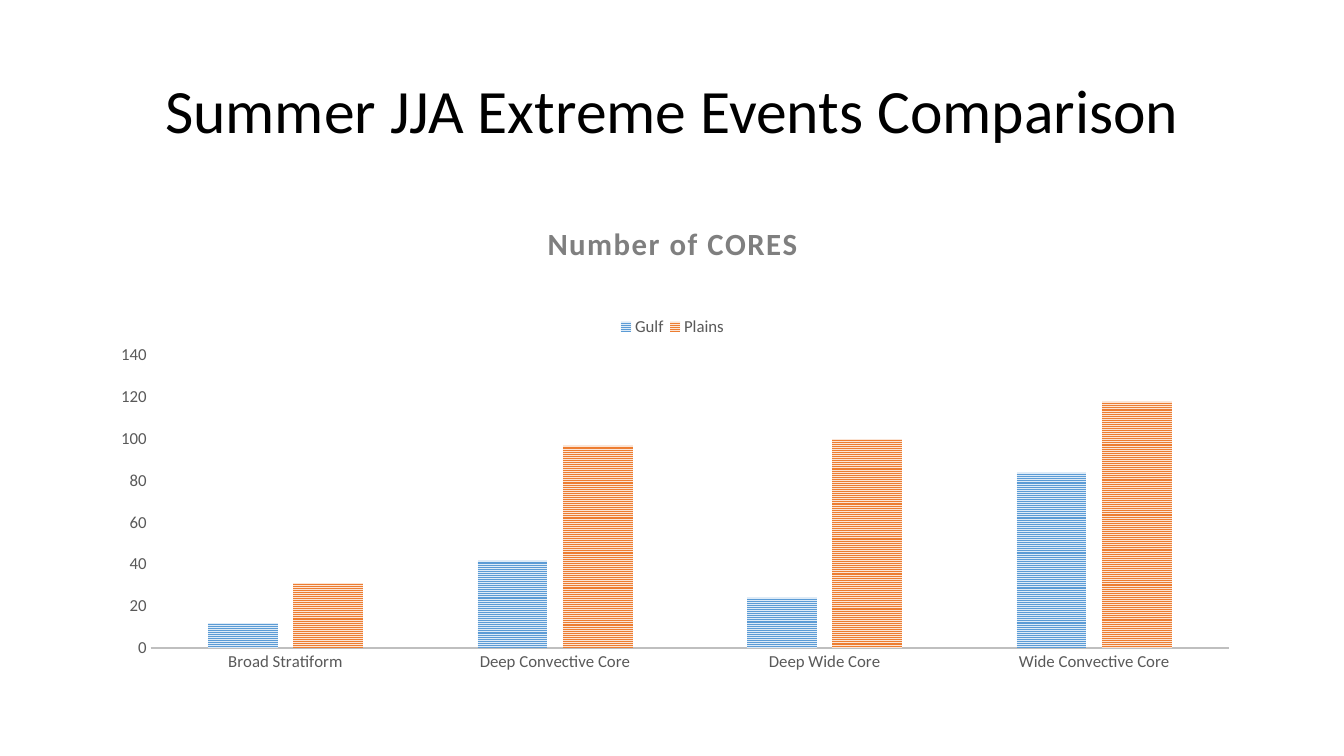
import pptx
import pptx.chart.data
import pptx.dml.color
import pptx.enum.chart
import pptx.enum.dml
import pptx.enum.text
import pptx.oxml
import pptx.oxml.ns
import pptx.util

COL, ROW = 0.92, 0.4
CATEGORIES = ["Broad Stratiform", "Deep Convective Core", "Deep Wide Core", "Wide Convective Core"]
SERIES = [
    ("Gulf", [12, 42, 24, 84], "5B9BD5", "DEEBF7"),
    ("Plains", [31, 97, 100, 118], "ED7D31", "FBE5D6"),
]


def rgb(value):
    return pptx.dml.color.RGBColor.from_string(value)


def assign(obj, values):
    for name, value in values.items():
        setattr(obj, name, value)


class Deck:
    font = "Calibri"
    ink, label, heading, axis_line = "000000", "595959", "7F7F7F", "BFBFBF"

    def __init__(self, prs):
        self.s = prs.slides.add_slide(prs.slide_layouts[5])

    def box(self, col, row, cols, rows):
        names = ("left", "top", "width", "height")
        lengths = (col * COL, row * ROW, cols * COL, rows * ROW)
        return {n: pptx.util.Inches(v) for n, v in zip(names, lengths)}

    def style(self, font, size, color, bold=False):
        assign(font, {"name": self.font, "size": pptx.util.Pt(size), "bold": bold})
        font.color.rgb = rgb(color)

    def title(self, text, *place):
        sp = self.s.shapes.title
        assign(sp, self.box(*place))
        tf = sp.text_frame
        assign(tf, {
            "text": text,
            "word_wrap": True,
            "auto_size": pptx.enum.text.MSO_AUTO_SIZE.NONE,
            "vertical_anchor": pptx.enum.text.MSO_ANCHOR.MIDDLE,
        })
        p = tf.paragraphs[0]
        assign(p, {"alignment": pptx.enum.text.PP_ALIGN.CENTER, "line_spacing": 0.9})
        self.style(p.runs[0].font, 44, self.ink)

    def layout(self, x, y, w, h, target=""):
        shares = "".join(f'<c:{n} val="{v}"/>' for n, v in zip("xywh", (x, y, w, h)))
        return pptx.oxml.parse_xml(
            f'<c:layout {pptx.oxml.ns.nsdecls("c")}><c:manualLayout>{target}'
            f'<c:xMode val="edge"/><c:yMode val="edge"/>{shares}'
            "</c:manualLayout></c:layout>"
        )

    def chart(self, heading, *place):
        data = pptx.chart.data.CategoryChartData()
        data.categories = CATEGORIES
        for name, values, *_ in SERIES:
            data.add_series(name, values)
        kind = pptx.enum.chart.XL_CHART_TYPE.COLUMN_CLUSTERED
        chart = self.s.shapes.add_chart(
            kind, *self.box(*place).values(), data).chart
        self.style(chart.font, 10, self.ink)
        self.chart_title(chart, heading)
        self.axes(chart)
        self.legend(chart)
        plot = chart.plots[0]
        assign(plot, {"gap_width": 164, "overlap": -22, "vary_by_categories": False})
        for series, (_, _, fore, back) in zip(plot.series, SERIES):
            series.invert_if_negative = False
            fill = series.format.fill
            fill.patterned()
            fill.pattern = pptx.enum.dml.MSO_PATTERN.NARROW_HORIZONTAL
            fill.fore_color.rgb, fill.back_color.rgb = rgb(fore), rgb(back)
        area = chart.element.xpath(".//c:plotArea")[0]
        for old in area.xpath("./c:layout"):
            area.remove(old)
        area.insert(0, self.layout(0.05, 0.32, 0.93, 0.61, '<c:layoutTarget val="inner"/>'))

    def chart_title(self, chart, heading):
        chart.has_title = True
        tf = chart.chart_title.text_frame
        tf.text = heading
        self.style(tf.paragraphs[0].runs[0].font, 22, self.heading, True)
        chart.chart_title.include_in_layout = False
        chart.element.xpath(".//c:title//a:r/a:rPr")[0].set("spc", "120")

    def axes(self, chart):
        none = pptx.enum.chart.XL_TICK_MARK.NONE
        for axis in (chart.category_axis, chart.value_axis):
            assign(axis, {"major_tick_mark": none, "minor_tick_mark": none,
                          "has_major_gridlines": False})
            self.style(axis.tick_labels.font, 12, self.label)
        line = chart.category_axis.format.line
        line.width = pptx.util.Pt(1.5)
        line.color.rgb = rgb(self.axis_line)
        assign(chart.value_axis, {"minimum_scale": 0, "maximum_scale": 140, "major_unit": 20})
        chart.value_axis.format.line.fill.background()

    def legend(self, chart):
        chart.has_legend = True
        assign(chart.legend, {"position": pptx.enum.chart.XL_LEGEND_POSITION.TOP,
                              "include_in_layout": False})
        self.style(chart.legend.font, 12, self.label)
        anchor = chart.element.xpath(".//c:legend/c:legendPos")[0]
        for old in chart.element.xpath(".//c:legend/c:layout"):
            old.getparent().remove(old)
        anchor.addnext(self.layout(0.45, 0.23, 0.1, 0.06))


def main():
    prs = pptx.Presentation()
    assign(prs, {"slide_width": pptx.util.Inches(13.33), "slide_height": pptx.util.Inches(7.5)})
    deck = Deck(prs)
    deck.title("Summer JJA Extreme Events Comparison", 1, 1, 12.5, 3.62)
    deck.chart("Number of CORES", 1, 5, 12.5, 11.9)
    prs.save("out.pptx")


if __name__ == "__main__":
    main()
